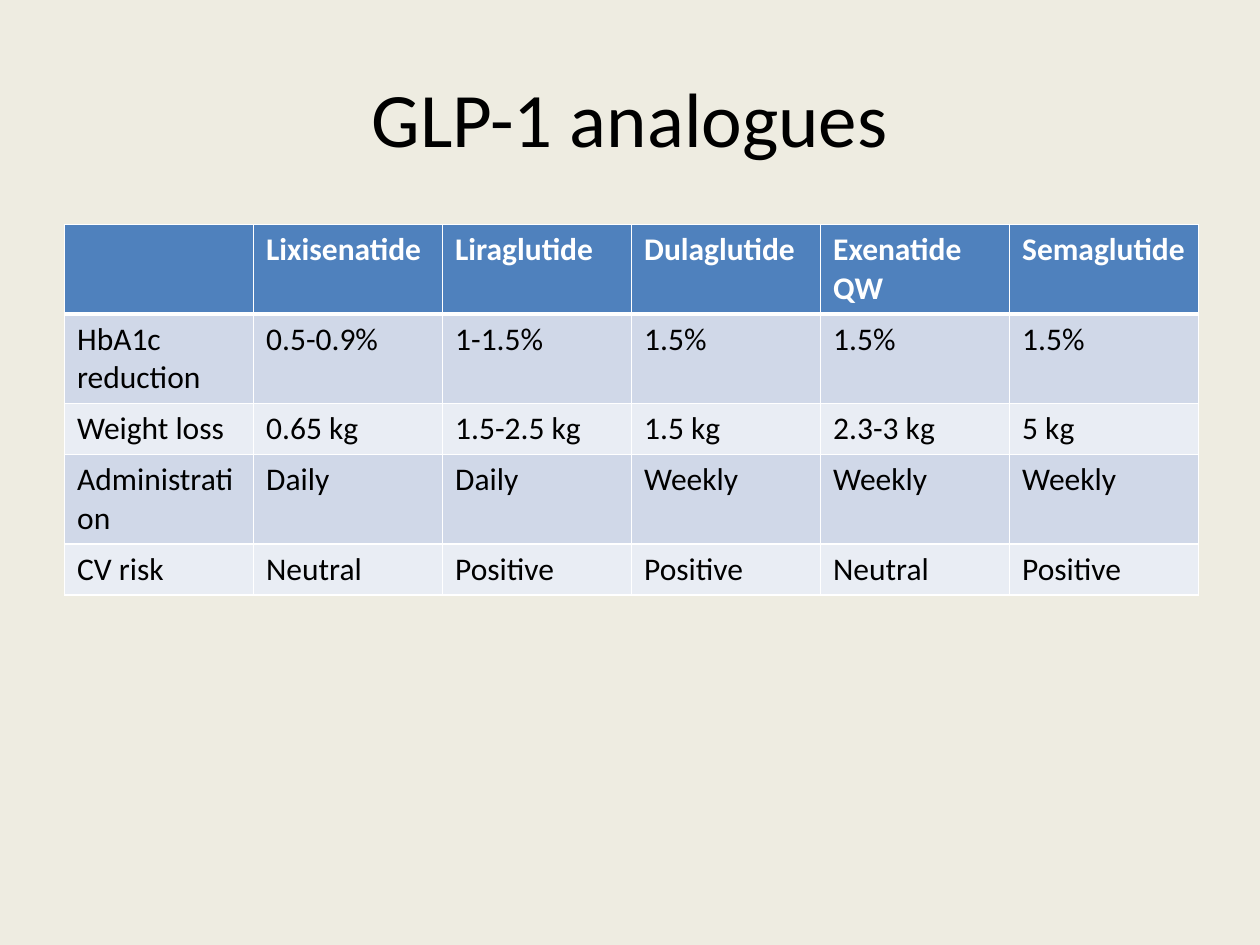
from lxml.etree import SubElement
from pptx import Presentation
from pptx.dml.color import RGBColor
from pptx.enum.text import MSO_ANCHOR, PP_ALIGN
from pptx.oxml.ns import qn
from pptx.util import Pt

TITLE = "GLP-1 analogues"
ROWS = [
    ["", "Lixisenatide", "Liraglutide", "Dulaglutide", "Exenatide QW", "Semaglutide"],
    ["HbA1c reduction", "0.5-0.9%", "1-1.5%", "1.5%", "1.5%", "1.5%"],
    ["Weight loss", "0.65 kg", "1.5-2.5 kg", "1.5 kg", "2.3-3 kg", "5 kg"],
    ["Administration", "Daily", "Daily", "Weekly", "Weekly", "Weekly"],
    ["CV risk", "Neutral", "Positive", "Positive", "Neutral", "Positive"],
]
FONT = "Calibri"
PAPER, BLACK, WHITE = "EEECE1", "000000", "FFFFFF"
HEAD, BANDS = "4F81BD", ["D0D8E8", "E9EDF4"]
COL, HEAD_ROW, BODY_ROW = 108, 21.6, 29.2
THIN, THICK = 1, 3


def paint(fill, color):
    fill.solid()
    fill.fore_color.rgb = RGBColor.from_string(color)


def write(frame, text, size=18, color=BLACK, bold=False, align=None):
    para = frame.paragraphs[0]
    para.alignment = align
    para.font.size = Pt(size)
    if text:
        run = para.add_run()
        run.text = text
        font = run.font
        font.name, font.size, font.bold = FONT, Pt(size), bold
        font.color.rgb = RGBColor.from_string(color)


def edge(cell, **widths):
    """Draw white cell borders; keys are the sides L, R, T and B."""
    props = cell._tc.get_or_add_tcPr()
    for side, width in widths.items():
        line = SubElement(props, qn(f"a:ln{side}"), w=str(Pt(width)))
        fill = SubElement(line, qn("a:solidFill"))
        SubElement(fill, qn("a:srgbClr"), val=WHITE)


def main():
    deck = Presentation()
    deck.slide_width, deck.slide_height = Pt(720), Pt(540)
    slide = deck.slides.add_slide(deck.slide_layouts[5])
    paint(slide.background.fill, PAPER)

    title = slide.shapes.title
    title.left, title.top, title.width, title.height = Pt(36), Pt(21.6), Pt(648), Pt(90)
    title.text_frame.vertical_anchor = MSO_ANCHOR.MIDDLE
    write(title.text_frame, TITLE, size=44, align=PP_ALIGN.CENTER)

    count = len(ROWS[0])
    high = HEAD_ROW + BODY_ROW * (len(ROWS) - 1)
    table = slide.shapes.add_table(
        len(ROWS), count, Pt(36.9), Pt(128.2), Pt(COL * count), Pt(high)).table
    for col in table.columns:
        col.width = Pt(COL)
    for r, texts in enumerate(ROWS):
        head = r == 0
        table.rows[r].height = Pt(HEAD_ROW if head else BODY_ROW)
        for c, text in enumerate(texts):
            cell = table.cell(r, c)
            edge(cell, L=THIN, R=THIN, T=THICK if r == 1 else THIN,
                 B=THICK if head else THIN)
            paint(cell.fill, HEAD if head else BANDS[(r - 1) % 2])
            write(cell.text_frame, text, color=WHITE if head else BLACK, bold=head)

    deck.save("out.pptx")


if __name__ == "__main__":
    main()
